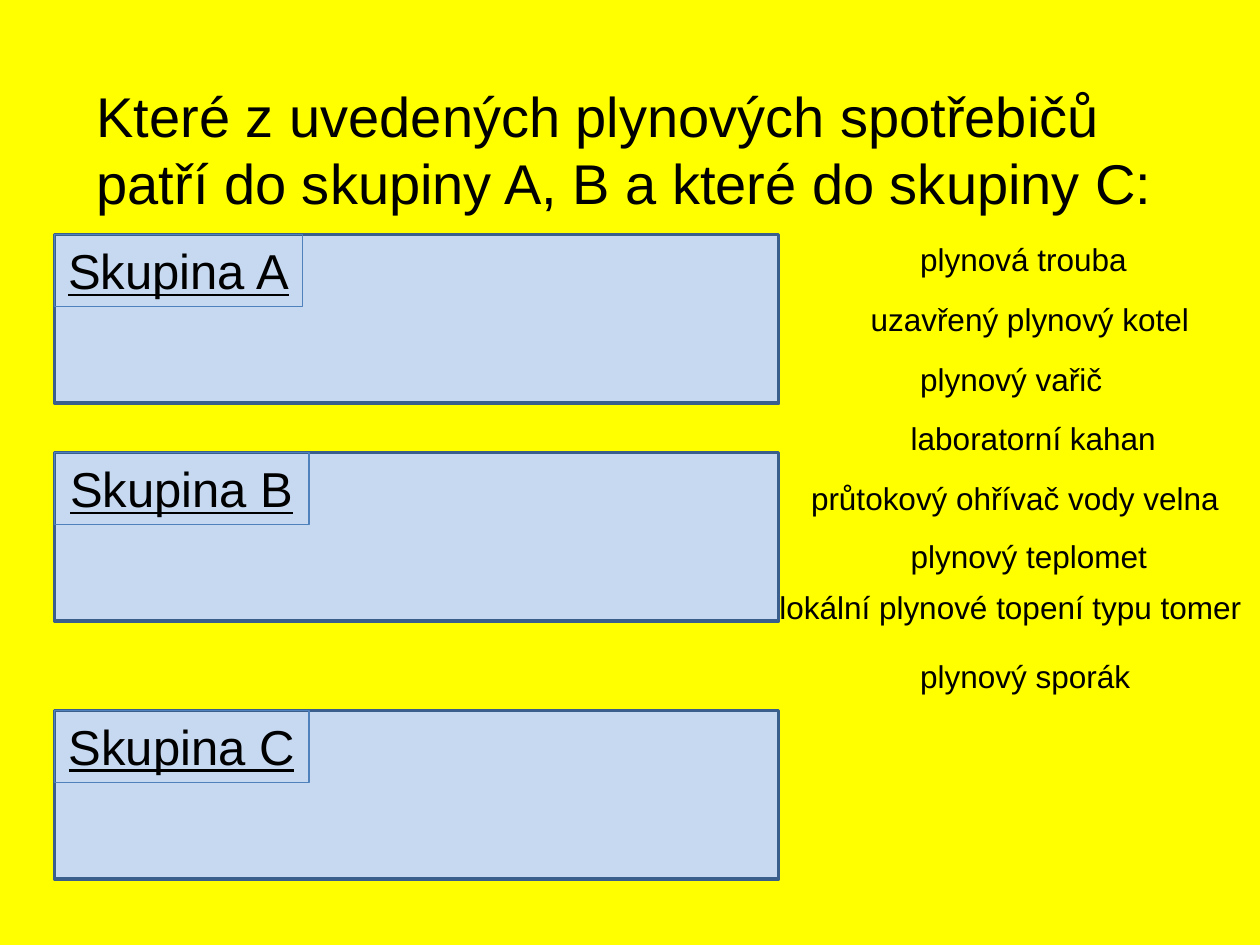
from pptx import Presentation
from pptx.dml.color import RGBColor
from pptx.enum.shapes import MSO_SHAPE
from pptx.enum.text import MSO_ANCHOR, PP_ALIGN
from pptx.util import Cm, Pt


def paint(color, value):
    color.rgb = RGBColor.from_string(value)


def write(shape, text, size, align=PP_ALIGN.LEFT, wrap=True):
    frame = shape.text_frame
    frame.text = text
    frame.word_wrap = wrap
    frame.vertical_anchor = MSO_ANCHOR.TOP
    para = frame.paragraphs[0]
    para.alignment = align
    font = para.runs[0].font
    font.name = "Arial"
    font.size = Pt(size)
    paint(font.color, "000000")
    return font


deck = Presentation()
deck.slide_width = Cm(25.4)
deck.slide_height = Cm(19.05)
slide = deck.slides.add_slide(deck.slide_layouts[6])
shapes = slide.shapes

# Yellow background
back = slide.background.fill
back.solid()
paint(back.fore_color, "FFFF00")

# Question
title = shapes.add_textbox(Cm(1.7), Cm(1.52), Cm(22.8), Cm(3))
write(title, "Které z uvedených plynových spotřebičů "
      "patří do skupiny A, B a které do skupiny C:", 32)

# Group boxes, each with a label in its top left corner
left = Cm(1.1)
groups = [("A", 4.73, 5), ("B", 9.12, 5.13), ("C", 14.32, 5.13)]
for name, top, width in groups:
    box = shapes.add_shape(MSO_SHAPE.RECTANGLE, left, Cm(top), Cm(14.6), Cm(3.4))
    box.shadow.inherit = False
    box.fill.solid()
    paint(box.fill.fore_color, "C6D9F1")
    paint(box.line.color, "3A5F8C")
    box.line.width = Pt(2)

    label = shapes.add_shape(MSO_SHAPE.RECTANGLE, left, Cm(top), Cm(width), Cm(1.45))
    label.shadow.inherit = False
    label.fill.background()
    paint(label.line.color, "4F81BD")
    label.line.width = Pt(0.75)
    font = write(label, f"Skupina {name}", 28, PP_ALIGN.CENTER)
    font.underline = True

# Appliances to sort: text, left, top, width
items = [
    ("plynová trouba", 18.3, 4.72, 4.72),
    ("uzavřený plynový kotel", 17.3, 5.92, 6.98),
    ("plynový vařič", 18.3, 7.14, 4.22),
    ("laboratorní kahan", 18.11, 8.33, 5.51),
    ("průtokový ohřívač vody velna", 16.1, 9.53, 9.07),
    ("plynový teplomet", 18.11, 10.7, 5.33),
    ("lokální plynové topení typu tomer", 15.34, 11.73, 10.06),
    ("plynový sporák", 18.3, 13.13, 4.78),
]
for text, x, y, width in items:
    item = shapes.add_textbox(Cm(x), Cm(y), Cm(width), Cm(1.02))
    align = PP_ALIGN.CENTER if width > 10 else PP_ALIGN.LEFT
    write(item, text, 18, align, wrap=False)

deck.save("out.pptx")
